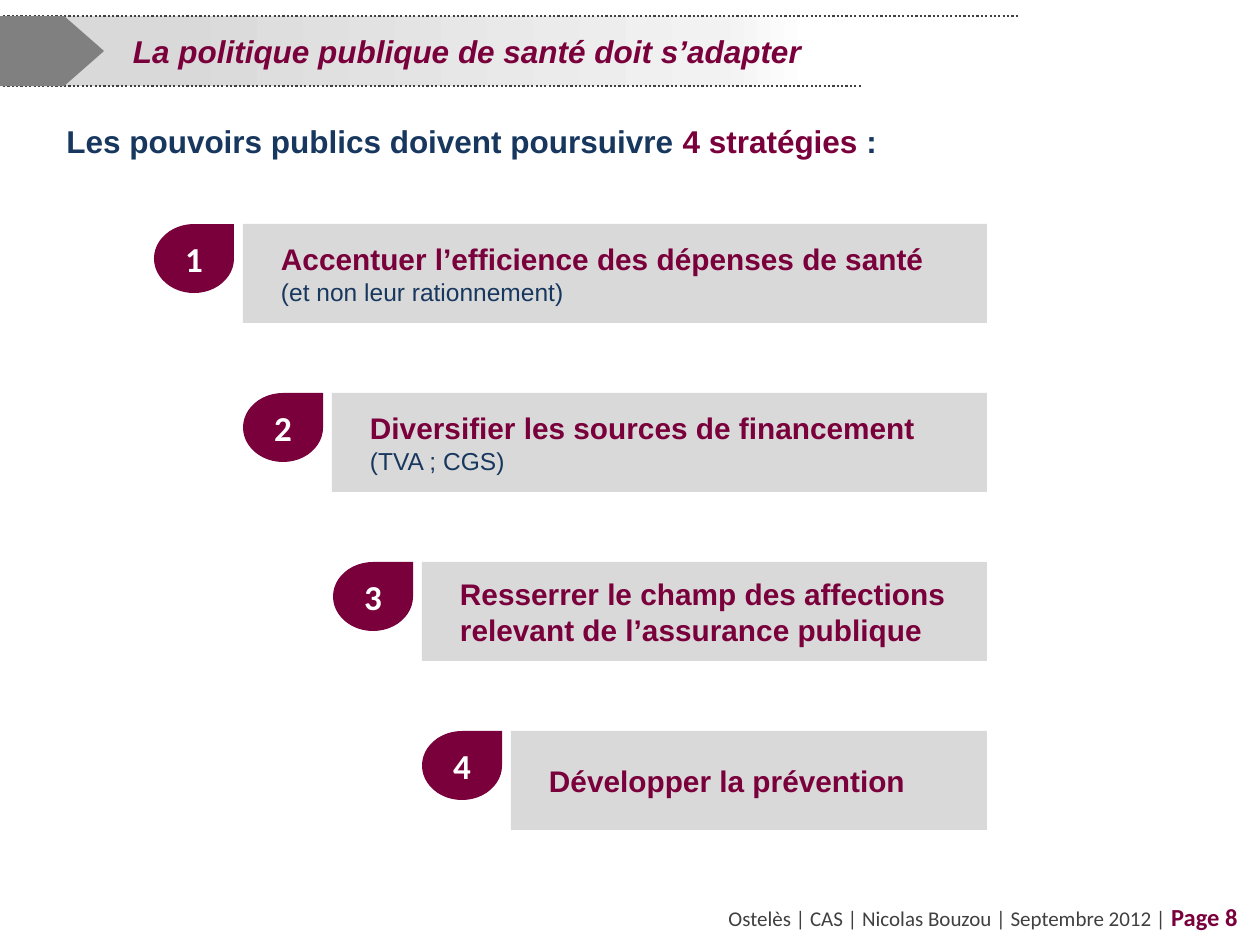
from copy import deepcopy
from dataclasses import dataclass

from lxml import etree
from pptx import Presentation
from pptx.dml.color import RGBColor
from pptx.enum import dml, shapes, text
from pptx.oxml.ns import qn
from pptx.util import Pt

EMU_PER_PX = 914400 / 126


@dataclass(frozen=True)
class Theme:
    plum: str = "7A003C"
    navy: str = "17375E"
    dark: str = "404040"
    mid: str = "808080"
    light: str = "D9D9D9"
    white: str = "FFFFFF"
    band: tuple = ((0.14, "D9D9D9"), (0.62, "F2F2F2"), (0.70, "FFFFFF"))
    body: str = "Arial"
    label: str = "Calibri"
    heading_size: int = 18
    strategy_size: int = 17
    detail_size: int = 14
    badge_size: int = 20
    footer_size: int = 12
    page_size: int = 14


THEME = Theme()

STRATEGIES = [
    ("Accentuer l’efficience des dépenses de santé", "(et non leur rationnement)"),
    ("Diversifier les sources de financement", "(TVA ; CGS)"),
    ("Resserrer le champ des affections relevant de l’assurance publique", None),
    ("Développer la prévention", None),
]


def px(*lengths):
    return [round(length * EMU_PER_PX) for length in lengths]


def set_format(target, values):
    for name, value in values.items():
        setattr(target, name, value)


def style(color, size, font=THEME.body, bold=True, italic=False):
    return {"color": color, "size": Pt(size), "name": font, "bold": bold, "italic": italic}


def write(frame, paragraphs, align=text.PP_ALIGN.LEFT, anchor=text.MSO_ANCHOR.MIDDLE, left=None):
    set_format(frame, {"word_wrap": True, "vertical_anchor": anchor})
    if left is not None:
        frame.margin_left = px(left)[0]
    for index, pieces in enumerate(paragraphs):
        paragraph = frame.add_paragraph() if index else frame.paragraphs[0]
        paragraph.alignment = align
        for wording, values in pieces:
            run = paragraph.add_run()
            run.text = wording
            values = dict(values)
            run.font.color.rgb = RGBColor.from_string(values.pop("color"))
            set_format(run.font, values)


def add_block(slide, kind, box, color=None):
    block = slide.shapes.add_shape(kind, *px(*box))
    block.shadow.inherit = False
    block.line.fill.background()
    if color:
        block.fill.solid()
        block.fill.fore_color.rgb = RGBColor.from_string(color)
    return block


def add_text(slide, box, pieces, align=text.PP_ALIGN.LEFT):
    frame = slide.shapes.add_textbox(*px(*box)).text_frame
    write(frame, [pieces], align, text.MSO_ANCHOR.TOP)


def add_title_band(slide, box, title):
    band = add_block(slide, shapes.MSO_SHAPE.RECTANGLE, box)
    band.fill.gradient()
    band.fill.gradient_angle = 0
    stop_list = band._element.spPr.find(qn("a:gradFill")).find(qn("a:gsLst"))
    stop_list.append(deepcopy(stop_list[-1]))
    for stop, (position, color) in zip(band.fill.gradient_stops, THEME.band):
        stop.position = position
        stop.color.rgb = RGBColor.from_string(color)
    write(band.text_frame, [[(title, style(THEME.plum, THEME.heading_size, italic=True))]], left=130)


def add_dotted_rule(slide, left, right, top):
    rule = slide.shapes.add_connector(shapes.MSO_CONNECTOR.STRAIGHT, *px(left, top, right, top))
    rule.line.color.rgb = RGBColor.from_string(THEME.dark)
    set_format(rule.line, {"width": Pt(1.25), "dash_style": dml.MSO_LINE.ROUND_DOT})
    etree.SubElement(rule._element.spPr, qn("a:effectLst"))


def add_strategy(slide, index, strategy, detail):
    left, right, top = 243 + index * 179 // 2, 987, 224 + index * 169
    card = add_block(slide, shapes.MSO_SHAPE.PENTAGON, (left, top, right - left, 99), THEME.light)
    card.adjustments[0] = 0
    paragraphs = [[(strategy, style(THEME.plum, THEME.strategy_size))]]
    if detail:
        paragraphs.append([(detail, style(THEME.navy, THEME.detail_size, bold=False))])
    write(card.text_frame, paragraphs, left=38)

    badge = add_block(slide, shapes.MSO_SHAPE.TEAR, (left - 89, top, 80, 69), THEME.plum)
    number = style(THEME.white, THEME.badge_size, THEME.label)
    write(badge.text_frame, [[(str(index + 1), number)]], text.PP_ALIGN.CENTER)


def main():
    deck = Presentation()
    deck.slide_width, deck.slide_height = px(1260, 945)
    slide = deck.slides.add_slide(deck.slide_layouts[6])

    add_text(slide, (353, 896, 897, 49), [
        ("Ostelès | CAS | Nicolas Bouzou | Septembre 2012 | ",
         style(THEME.dark, THEME.footer_size, THEME.label, bold=False)),
        ("Page 8", style(THEME.plum, THEME.page_size, THEME.label)),
    ], text.PP_ALIGN.RIGHT)

    add_title_band(slide, (3, 16, 1153, 70), "La politique publique de santé doit s’adapter")
    add_dotted_rule(slide, 3, 1019, 16)
    add_dotted_rule(slide, 3, 861, 86)
    marker = add_block(slide, shapes.MSO_SHAPE.PENTAGON, (0, 16, 104, 70), THEME.mid)
    marker.adjustments[0] = 0.57

    navy = style(THEME.navy, THEME.heading_size)
    add_text(slide, (54, 116, 1091, 69), [
        ("Les pouvoirs publics doivent poursuivre ", navy),
        ("4 stratégies", style(THEME.plum, THEME.heading_size)),
        (" :", navy),
    ])

    for index, (strategy, detail) in enumerate(STRATEGIES):
        add_strategy(slide, index, strategy, detail)

    deck.save("out.pptx")


if __name__ == "__main__":
    main()
